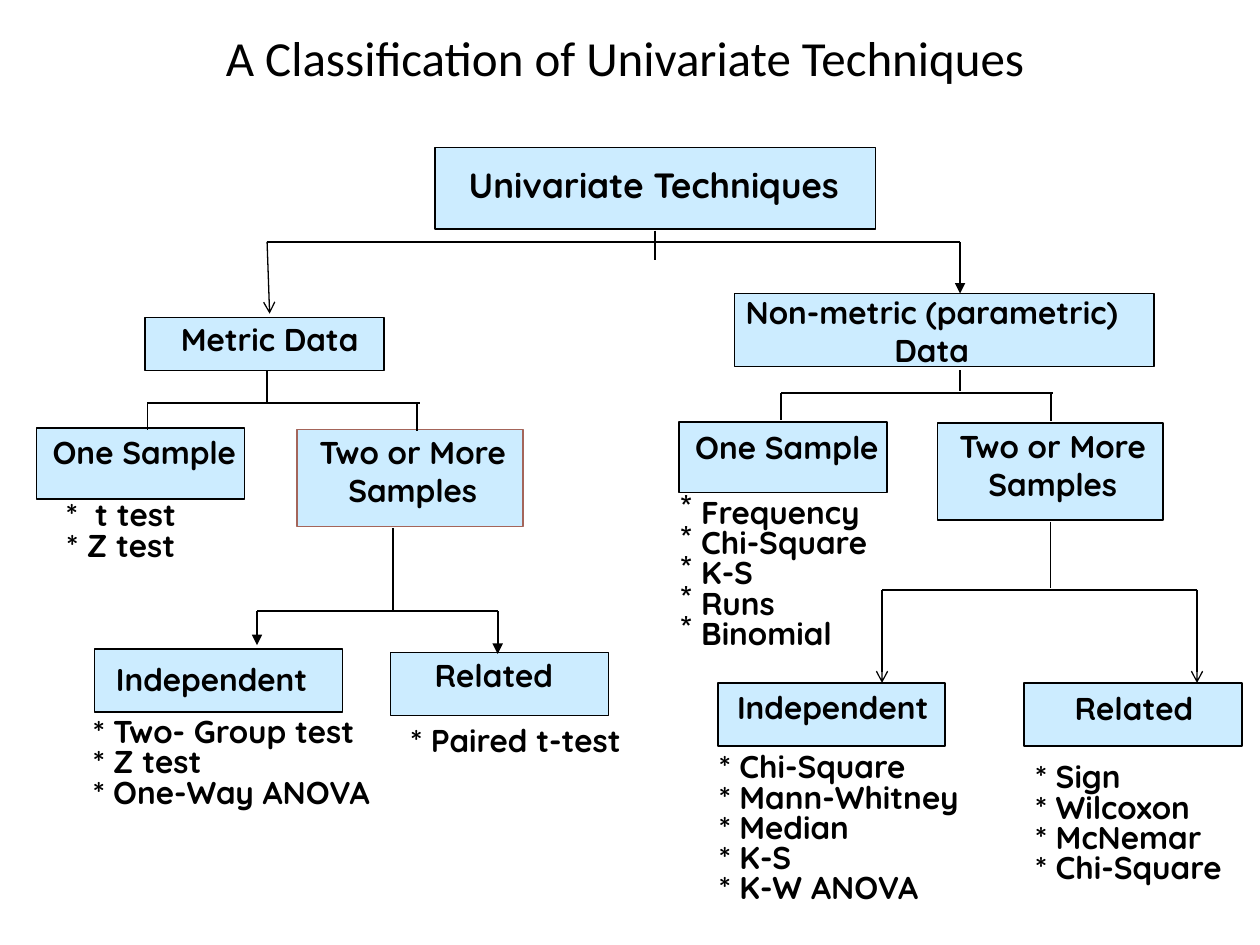
from lxml import etree
from pptx import Presentation
from pptx import util as u
from pptx.dml.color import RGBColor
from pptx.enum import shapes, text
from pptx.oxml import ns

PX = u.Inches(1) // 100
BLACK = RGBColor(0, 0, 0)
SKY = RGBColor(0xCC, 0xEC, 0xFF)
RUST = RGBColor(0xA4, 0x65, 0x5A)
LABEL_FONT = {"name": "Quicksand", "size": u.Pt(18), "bold": True}
ROOT_FONT = {**LABEL_FONT, "size": u.Pt(20)}
TITLE_FONT = {"name": "Calibri", "size": u.Pt(28), "bold": False}
CENTER = {"alignment": text.PP_ALIGN.CENTER}
TIGHT = {"line_spacing": 0.8}

METRIC = {
    "nodes": [
        ("Metric Data", (95, 22, 190, 42), (77, 19, 234, 40), BLACK),
        ("One Sample", (9, 110, 165, 56), (-5, 109, 199, 40), BLACK),
        ("Two or More Samples", (216, 111, 179, 77), (208, 109, 199, 70), RUST),
        ("Independent", (55, 285, 197, 50), (55, 289, 186, 40), BLACK),
        ("Related", (290, 288, 173, 50), (279, 286, 186, 40), BLACK),
    ],
    "lists": [
        (["*  t test", "* Z test"], (0, 164, 152, 58), {**TIGHT, **CENTER}, {}),
        (["* Two- Group test", "* Z test", "* One-Way ANOVA"],
         (25, 336, 288, 82), TIGHT, {"marL": 43, "indent": -24}),
        (["* Paired t-test"], (296, 343, 192, 34), TIGHT, {}),
    ],
    "forks": [
        ((192, 64, 89, 1), (97, 313, 90),
         [(97, 97, 111, None, 1), (311, 311, 112, None, 1)]),
        ((292, 189, 256, 1), (184, 375, 255),
         [(184, 184, 282, "triangle", 1), (375, 375, 289, "triangle", 1)]),
    ],
}
NON_METRIC = {
    "nodes": [
        ("Non-metric (parametric) Data", (63, 3, 333, 58), (42, -2, 355, 70), BLACK),
        ("One Sample", (19, 105, 165, 56), (5, 105, 199, 40), BLACK),
        ("Two or More Samples", (224, 106, 179, 77), (216, 104, 199, 70), BLACK),
        ("Independent", (50, 312, 180, 50), (48, 311, 186, 40), BLACK),
        ("Related", (293, 312, 173, 50), (287, 312, 186, 40), BLACK),
    ],
    "lists": [
        ([" Frequency", " Chi-Square", " K-S", " Runs", " Binomial"],
         (10, 162, 194, 131), TIGHT, {"bullet": "*"}),
        (["* Chi-Square", "* Mann-Whitney", "* Median", "* K-S", "* K-W ANOVA"],
         (41, 364, 247, 131), TIGHT, {}),
        (["* Sign", "* Wilcoxon", "* McNemar", "* Chi-Square"],
         (292, 372, 194, 107), TIGHT, {}),
    ],
    "forks": [
        ((242, 64, 80, 1), (100, 316, 82),
         [(100, 100, 103, None, 1), (314, 314, 104, None, 1)]),
        ((314, 184, 237, 0.75), (180, 430, 238),
         [(180, 180, 312, "arrow", 0.75), (430, 430, 312, "arrow", 0.75)]),
    ],
}


def apply(target, values):
    """Set each named attribute on the target."""
    for name, value in values.items():
        setattr(target, name, value)


def shift(box, origin):
    """Move a box from its region to the page."""
    return box[0] + origin[0], box[1] + origin[1], *box[2:]


def scaled(values):
    """Turn pixel lengths into EMU."""
    return [value * PX for value in values]


def add_text(page, box, lines, font, layout, marks=None, anchor=text.MSO_ANCHOR.TOP):
    """Write one paragraph per line in a wrapped text box."""
    marks = marks or {}
    frame = page.shapes.add_textbox(*scaled(box)).text_frame
    apply(frame, {"word_wrap": True, "vertical_anchor": anchor})
    for index, line in enumerate(lines):
        para = frame.paragraphs[0] if index == 0 else frame.add_paragraph()
        apply(para, layout)
        span = para.add_run()
        span.text = line
        apply(span.font, font)
        span.font.color.rgb = BLACK
        properties = para._p.get_or_add_pPr()
        for name in ("marL", "indent"):
            if name in marks:
                properties.set(name, str(marks[name] * PX))
        if "bullet" in marks:
            etree.SubElement(properties, ns.qn("a:buChar")).set("char", marks["bullet"])


def add_node(page, box, label_box, label, border=BLACK, font=LABEL_FONT):
    """Draw a filled rectangle and its label."""
    node = page.shapes.add_shape(shapes.MSO_SHAPE.RECTANGLE, *scaled(box))
    node.shadow.inherit = False
    node.fill.solid()
    node.fill.fore_color.rgb = SKY
    node.line.color.rgb = border
    node.line.width = u.Pt(1)
    add_text(page, label_box, [label], font, CENTER)


def add_line(page, origin, ends, weight=1, head=None):
    """Draw a straight line with an optional arrowhead at its end."""
    start, end = shift(ends[:2], origin), shift(ends[2:], origin)
    line = page.shapes.add_connector(
        shapes.MSO_CONNECTOR.STRAIGHT, *scaled(start + end))
    line.line.color.rgb = BLACK
    line.line.width = u.Pt(weight)
    if head:
        outline = line.line._get_or_add_ln()
        etree.SubElement(outline, ns.qn("a:tailEnd")).set("type", head)
    etree.SubElement(line._element.spPr, ns.qn("a:effectLst"))


def add_fork(page, origin, stem, bar, legs):
    """Join a stem to its legs through a horizontal bar."""
    x, top, bottom, weight = stem
    left, right, level = bar
    add_line(page, origin, (x, top, x, bottom), weight)
    add_line(page, origin, (left, level, right, level))
    for start, end, foot, head, leg_weight in legs:
        add_line(page, origin, (start, level, end, foot), leg_weight, head)


def add_title(page, box):
    """Write the slide title."""
    add_text(page, box, ["A Classification of Univariate Techniques"],
             TITLE_FONT, CENTER, anchor=text.MSO_ANCHOR.MIDDLE)


def add_root(page, box):
    """Draw the top node and the fork to both branches."""
    add_node(page, shift((133, 0, 350, 65), box), shift((119, 8, 376, 43), box),
             "Univariate Techniques", font=ROOT_FONT)
    add_fork(page, box, (308, 66, 89, 1), (0, 550, 75),
             [(0, 2, 132, "arrow", 0.75), (550, 550, 116, "triangle", 1)])


def add_branch(page, box, branch):
    """Draw the nodes, test lists and forks of one branch."""
    for label, node_box, label_box, border in branch["nodes"]:
        add_node(page, shift(node_box, box), shift(label_box, box), label, border)
    for lines, list_box, layout, marks in branch["lists"]:
        add_text(page, shift(list_box, box), lines, LABEL_FONT, layout, marks)
    for fork in branch["forks"]:
        add_fork(page, box, *fork)


def main():
    """Build and save the deck."""
    deck = Presentation()
    apply(deck, {"slide_width": 1000 * PX, "slide_height": 750 * PX})
    page = deck.slides.add_slide(deck.slide_layouts[6])
    add_title(page, (17, -17, 958, 125))
    add_root(page, (212, 117, 550, 132))
    add_branch(page, (20, 230, 490, 420), METRIC)
    add_branch(page, (520, 230, 490, 500), NON_METRIC)
    deck.save("out.pptx")


if __name__ == "__main__":
    main()
